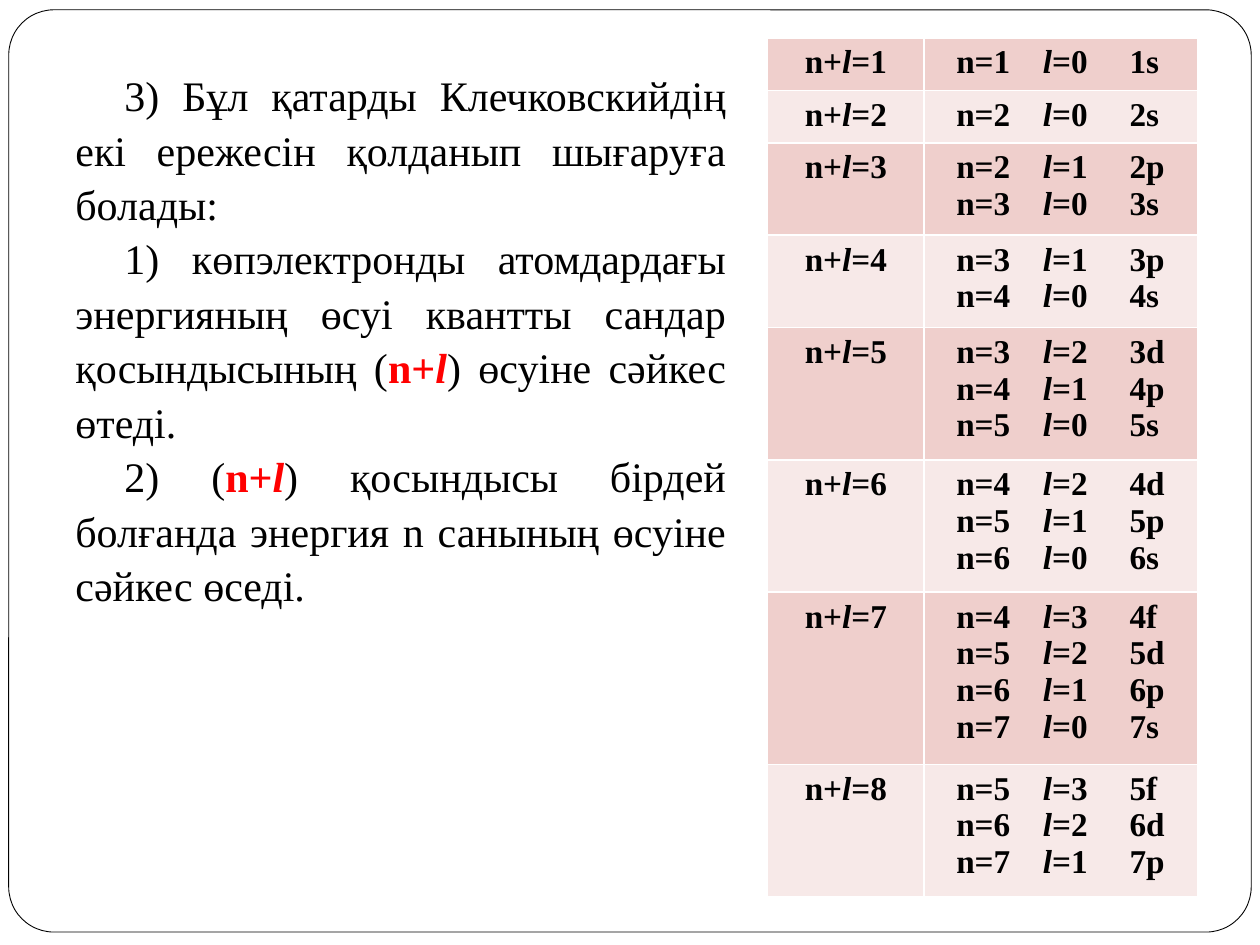
from pptx import Presentation
from pptx.dml.color import RGBColor
from pptx.enum.shapes import MSO_SHAPE
from pptx.enum.text import PP_ALIGN
from pptx.oxml import parse_xml
from pptx.oxml.ns import nsdecls
from pptx.util import Pt

FONT = "Times New Roman"
COLORS = {
    "text": "000000",
    "accent": "FF0000",
    "paper": "FFFFFF",
    "band_dark": "EFCFCC",
    "band_light": "F7E9E8",
}
RULES = [
    [("3) Бұл қатарды Клечковскийдің екі ережесін қолданып шығаруға болады:", "plain")],
    [
        ("1) көпэлектронды атомдардағы энергияның өсуі квантты сандар қосындысының (", "plain"),
        ("n+", "accent"),
        ("l", "accent italic"),
        (") өсуіне сәйкес өтеді.", "plain"),
    ],
    [
        ("2) (", "plain"),
        ("n+", "accent"),
        ("l", "accent italic"),
        (") қосындысы бірдей болғанда энергия n санының өсуіне сәйкес өседі.", "plain"),
    ],
]
SHELLS_BY_SUM = {
    1: [1],
    2: [2],
    3: [2, 3],
    4: [3, 4],
    5: [3, 4, 5],
    6: [4, 5, 6],
    7: [4, 5, 6, 7],
    8: [5, 6, 7],
}
SUBSHELLS = "spdf"
COLUMN_WIDTHS = [89.3, 156.2]
TAB_STOPS = [49.5, 99]
LINE_HEIGHT = 22.8
CELL_PADDING = 7.2


def color(name):
    return RGBColor.from_string(COLORS[name])


def add_runs(paragraph, segments, size):
    for text, style in segments:
        run = paragraph.add_run()
        run.text = text
        font = run.font
        font.name = FONT
        font.size = Pt(size)
        font.bold = "bold" in style or "accent" in style
        font.italic = "italic" in style
        font.color.rgb = color("accent" if "accent" in style else "text")


def add_paragraphs(text_frame, lines, size, alignment):
    for index, segments in enumerate(lines):
        paragraph = text_frame.paragraphs[0] if index == 0 else text_frame.add_paragraph()
        paragraph.alignment = alignment
        add_runs(paragraph, segments, size)


def add_tab_stops(paragraph):
    stops = "".join(f'<a:tab pos="{Pt(stop)}" algn="l"/>' for stop in TAB_STOPS)
    properties = paragraph._p.get_or_add_pPr()
    properties.append(parse_xml(f'<a:tabLst {nsdecls("a")}>{stops}</a:tabLst>'))


def add_frame(slide):
    frame = slide.shapes.add_shape(
        MSO_SHAPE.ROUNDED_RECTANGLE, Pt(5), Pt(5.6), Pt(710), Pt(527)
    )
    frame.adjustments[0] = 0.049
    frame.shadow.inherit = False
    frame.fill.solid()
    frame.fill.fore_color.rgb = color("paper")
    frame.line.color.rgb = color("text")
    frame.line.width = Pt(0.5)


def add_rules(slide):
    text_frame = slide.shapes.add_textbox(Pt(36), Pt(34), Pt(386), Pt(448.6)).text_frame
    text_frame.word_wrap = True
    add_paragraphs(text_frame, RULES, 24, PP_ALIGN.JUSTIFY)
    for paragraph in text_frame.paragraphs:
        paragraph.line_spacing = 1.08
        paragraph._p.get_or_add_pPr().set("indent", str(Pt(28)))


def fill_cell(cell, lines, alignment, margin_left, band):
    cell.fill.solid()
    cell.fill.fore_color.rgb = color(band)
    cell.margin_left = Pt(margin_left)
    cell.margin_right = Pt(10)
    cell.margin_top = cell.margin_bottom = Pt(3.6)
    add_paragraphs(cell.text_frame, lines, 19, alignment)


def add_subshell_table(slide):
    heights = [CELL_PADDING + LINE_HEIGHT * len(shells) for shells in SHELLS_BY_SUM.values()]
    table = slide.shapes.add_table(
        len(heights), 2, Pt(438.7), Pt(21.6), Pt(sum(COLUMN_WIDTHS)), Pt(sum(heights))
    ).table
    table.first_row = False
    table.horz_banding = False
    for column, width in zip(table.columns, COLUMN_WIDTHS):
        column.width = Pt(width)
    for index, (total, shells) in enumerate(SHELLS_BY_SUM.items()):
        table.rows[index].height = Pt(heights[index])
        band = "band_light" if index % 2 else "band_dark"
        label = [("n+", "bold"), ("l", "bold italic"), (f"={total}", "bold")]
        fill_cell(table.cell(index, 0), [label], PP_ALIGN.CENTER, 10, band)
        orbitals = [
            [
                (f"n={n}\t", "bold"),
                ("l", "bold italic"),
                (f"={total - n}\t{n}{SUBSHELLS[total - n]}", "bold"),
            ]
            for n in shells
        ]
        cell = table.cell(index, 1)
        fill_cell(cell, orbitals, PP_ALIGN.LEFT, 18.5, band)
        for paragraph in cell.text_frame.paragraphs:
            add_tab_stops(paragraph)


def main():
    presentation = Presentation()
    presentation.slide_width = Pt(720)
    presentation.slide_height = Pt(540)
    slide = presentation.slides.add_slide(presentation.slide_layouts[6])
    add_frame(slide)
    add_subshell_table(slide)
    add_rules(slide)
    presentation.save("out.pptx")


if __name__ == "__main__":
    main()
